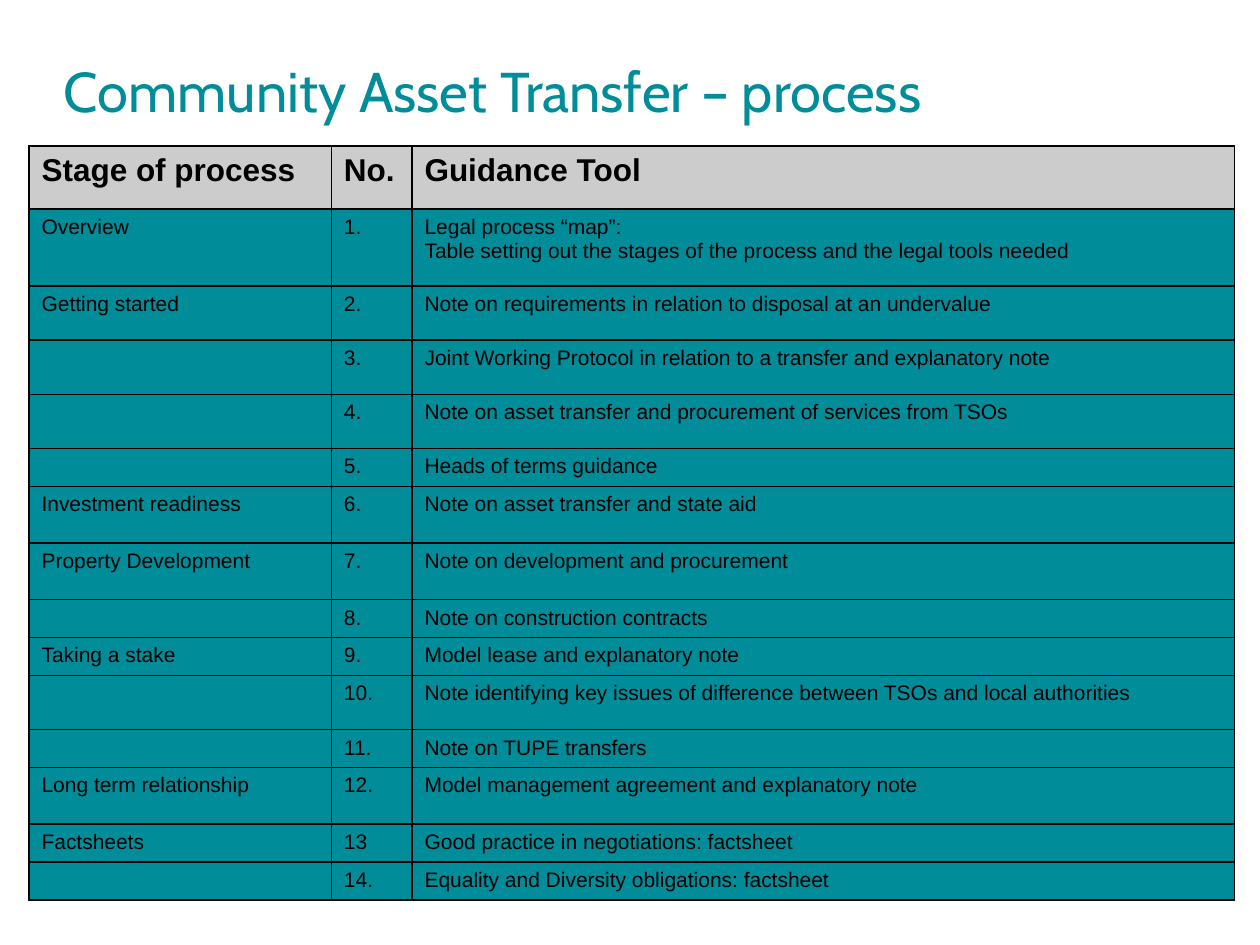
from lxml import etree
from pptx import Presentation
from pptx.dml.color import RGBColor
from pptx.enum.text import MSO_ANCHOR
from pptx.oxml.ns import qn
from pptx.util import Inches, Pt

TOP = MSO_ANCHOR.TOP
TEAL, GREY, BLACK = "008C99", "CCCCCC", "000000"
BODY_SIZE = 12


def add_run(paragraph, text, font, size, color, bold=False):
    run = paragraph.add_run()
    run.text = text
    run.font.name, run.font.size, run.font.bold = font, Pt(size), bold
    run.font.color.rgb = RGBColor.from_string(color)


def add_borders(cell):
    properties = cell._tc.get_or_add_tcPr()
    for position, side in enumerate(("lnL", "lnR", "lnT", "lnB")):
        line = etree.Element(qn(f"a:{side}"), w=str(Pt(1)))
        fill = etree.SubElement(line, qn("a:solidFill"))
        etree.SubElement(fill, qn("a:srgbClr"), val=BLACK)
        properties.insert(position, line)


prs = Presentation()
prs.slide_width, prs.slide_height = Inches(10), Inches(7.5)
slide = prs.slides.add_slide(prs.slide_layouts[6])

# Title
title = slide.shapes.add_textbox(Inches(0.41), Inches(0.4), Inches(8.94), Inches(0.58))
title.text_frame.word_wrap = True
title.text_frame.vertical_anchor = TOP
add_run(title.text_frame.paragraphs[0], "Community Asset Transfer – process", "Cabin", 32, TEAL)

# Stages and tools: row height, stage, number, guidance lines
column_widths = (2.4, 0.64, 6.53)
stages = [
    (0.5, "Stage of process", "No.", "Guidance Tool"),
    (0.61, "Overview", "1.", "Legal process “map”:\n"
     "Table setting out the stages of the process and the legal tools needed"),
    (0.43, "Getting started", "2.", "Note on requirements in relation to disposal at an undervalue"),
    (0.43, "", "3.", "Joint Working Protocol in relation to a transfer and explanatory note"),
    (0.43, "", "4.", "Note on asset transfer and procurement of services from TSOs"),
    (0.29, "", "5.", "Heads of terms guidance"),
    (0.45, "Investment readiness", "6.", "Note on asset transfer and state aid"),
    (0.45, "Property Development", "7.", "Note on development and procurement"),
    (0.29, "", "8.", "Note on construction contracts"),
    (0.29, "Taking a stake", "9.", "Model lease and explanatory note"),
    (0.43, "", "10.", "Note identifying key issues of difference between TSOs and local authorities"),
    (0.29, "", "11.", "Note on TUPE transfers"),
    (0.45, "Long term relationship", "12.", "Model management agreement and explanatory note"),
    (0.29, "Factsheets", "13", "Good practice in negotiations: factsheet"),
    (0.29, "", "14.", "Equality and Diversity obligations: factsheet"),
]
process = slide.shapes.add_table(
    len(stages), len(column_widths), Inches(0.23), Inches(1.16),
    Inches(sum(column_widths)), Inches(sum(stage[0] for stage in stages))).table
for column, width in zip(process.columns, column_widths):
    column.width = Inches(width)

for row, (height, *entries) in enumerate(stages):
    process.rows[row].height = Inches(height)
    heading = row == 0
    for column, entry in enumerate(entries):
        cell = process.cell(row, column)
        cell.fill.solid()
        cell.fill.fore_color.rgb = RGBColor.from_string(GREY if heading else TEAL)
        add_borders(cell)
        frame = cell.text_frame
        if not entry:
            # Keep empty cells from stretching their row
            etree.SubElement(frame.paragraphs[0]._p, qn("a:endParaRPr"), sz=str(BODY_SIZE * 100))
            continue
        for index, line in enumerate(entry.split("\n")):
            paragraph = frame.add_paragraph() if index else frame.paragraphs[0]
            add_run(paragraph, line, "Arial", 18 if heading else BODY_SIZE, BLACK, heading)

prs.save("out.pptx")
